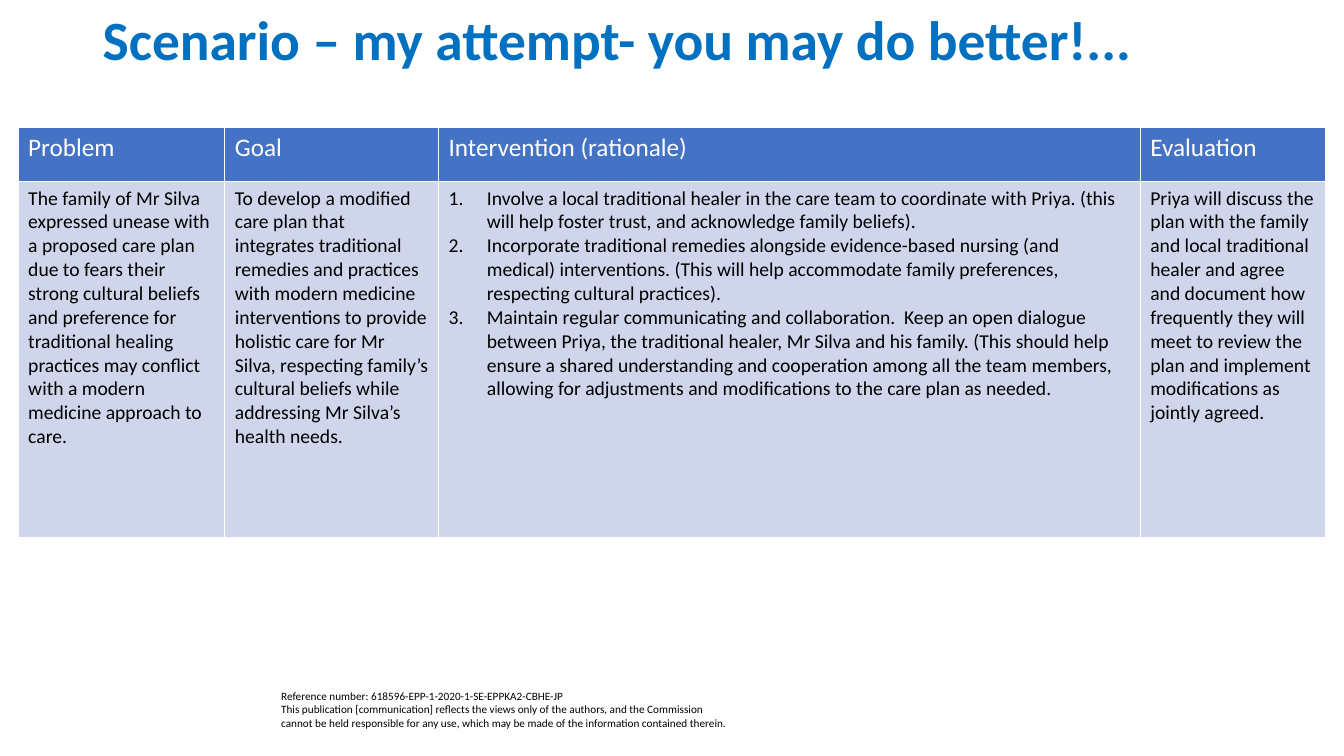
from lxml.etree import SubElement
from pptx import Presentation
from pptx.dml.color import RGBColor
from pptx.enum.text import MSO_ANCHOR
from pptx.oxml.ns import qn
from pptx.util import Inches, Pt

TITLE = "Scenario – my attempt- you may do better!..."
HEADS = ["Problem", "Goal", "Intervention (rationale)", "Evaluation"]
PLAN = [
    ["The family of Mr Silva expressed unease with a proposed care plan due to fears their strong cultural beliefs and preference for traditional healing practices may conflict with a modern medicine approach to care."],
    ["To develop a modified care plan that integrates traditional remedies and practices with modern medicine interventions to provide holistic care for Mr Silva, respecting family’s cultural beliefs while addressing Mr Silva’s health needs."],
    [
        "Involve a local traditional healer in the care team to coordinate with Priya. (this will help foster trust, and acknowledge family beliefs).",
        "Incorporate traditional remedies alongside evidence-based nursing (and medical) interventions. (This will help accommodate family preferences, respecting cultural practices).",
        "Maintain regular communicating and collaboration.  Keep an open dialogue between Priya, the traditional healer, Mr Silva and his family. (This should help ensure a shared understanding and cooperation among all the team members, allowing for adjustments and modifications to the care plan as needed.",
    ],
    ["Priya will discuss the plan with the family and local traditional healer and agree and document how frequently they will meet to review the plan and implement modifications as jointly agreed."],
]
NOTE = "Reference number: 618596-EPP-1-2020-1-SE-EPPKA2-CBHE-JP\nThis publication [communication] reflects the views only of the authors, and the Commission cannot be held responsible for any use, which may be made of the information contained therein."
WIDTHS = [2.05, 2.12, 6.96, 1.84]
HEIGHTS = [0.54, 3.53]
COLORS = {"title": "0070C0", "head": "4472C4", "body": "CFD5EA",
          "white": "FFFFFF", "black": "000000"}
FONT = "Calibri"


def color(name):
    return RGBColor.from_string(COLORS[name])


def write(frame, lines, size, tint="black", bold=False, spacing=None, number=False):
    for i, line in enumerate(lines):
        para = frame.paragraphs[0] if i == 0 else frame.add_paragraph()
        para.text = line
        if spacing:
            para.line_spacing = spacing
        if number:
            props = para._p.get_or_add_pPr()
            props.set("marL", str(Inches(0.38)))
            props.set("indent", str(-Inches(0.38)))
            SubElement(props, qn("a:buFont"), typeface="+mj-lt")
            SubElement(props, qn("a:buAutoNum"), type="arabicPeriod")
        for run in para.runs:
            run.font.name = FONT
            run.font.size = Pt(size)
            run.font.bold = bold
            run.font.color.rgb = color(tint)


def add_box(slide, place, lines, size, anchor=MSO_ANCHOR.TOP, **style):
    frame = slide.shapes.add_textbox(*map(Inches, place)).text_frame
    frame.word_wrap = True
    frame.vertical_anchor = anchor
    write(frame, lines, size, **style)


def paint(cell, fill):
    props = cell._tc.get_or_add_tcPr()
    for side in ("lnL", "lnR", "lnT", "lnB"):
        edge = SubElement(props, qn(f"a:{side}"), w=str(Pt(1)))
        SubElement(SubElement(edge, qn("a:solidFill")), qn("a:srgbClr"), val=COLORS["white"])
    cell.fill.solid()
    cell.fill.fore_color.rgb = color(fill)


def add_plan(slide):
    place = (0.18, 1.26, sum(WIDTHS), sum(HEIGHTS))
    table = slide.shapes.add_table(2, len(HEADS), *map(Inches, place)).table
    table.horz_banding = False
    for row, height in zip(table.rows, HEIGHTS):
        row.height = Inches(height)
    for i, (width, head, lines) in enumerate(zip(WIDTHS, HEADS, PLAN)):
        table.columns[i].width = Inches(width)
        top, body = table.cell(0, i), table.cell(1, i)
        paint(top, "head")
        paint(body, "body")
        write(top.text_frame, [head], 18, tint="white")
        write(body.text_frame, lines, 14, number=len(lines) > 1)


def main():
    deck = Presentation()
    deck.slide_width, deck.slide_height = Inches(13.33), Inches(7.5)
    slide = deck.slides.add_slide(deck.slide_layouts[6])
    add_box(slide, (2.69, 6.79, 4.64, 0.5), [NOTE], 8)
    add_box(slide, (0.92, 0.25, 11.5, 0.35), [TITLE], 39.6, anchor=MSO_ANCHOR.MIDDLE,
            tint="title", bold=True, spacing=0.9)
    add_plan(slide)
    deck.save("out.pptx")


if __name__ == "__main__":
    main()
